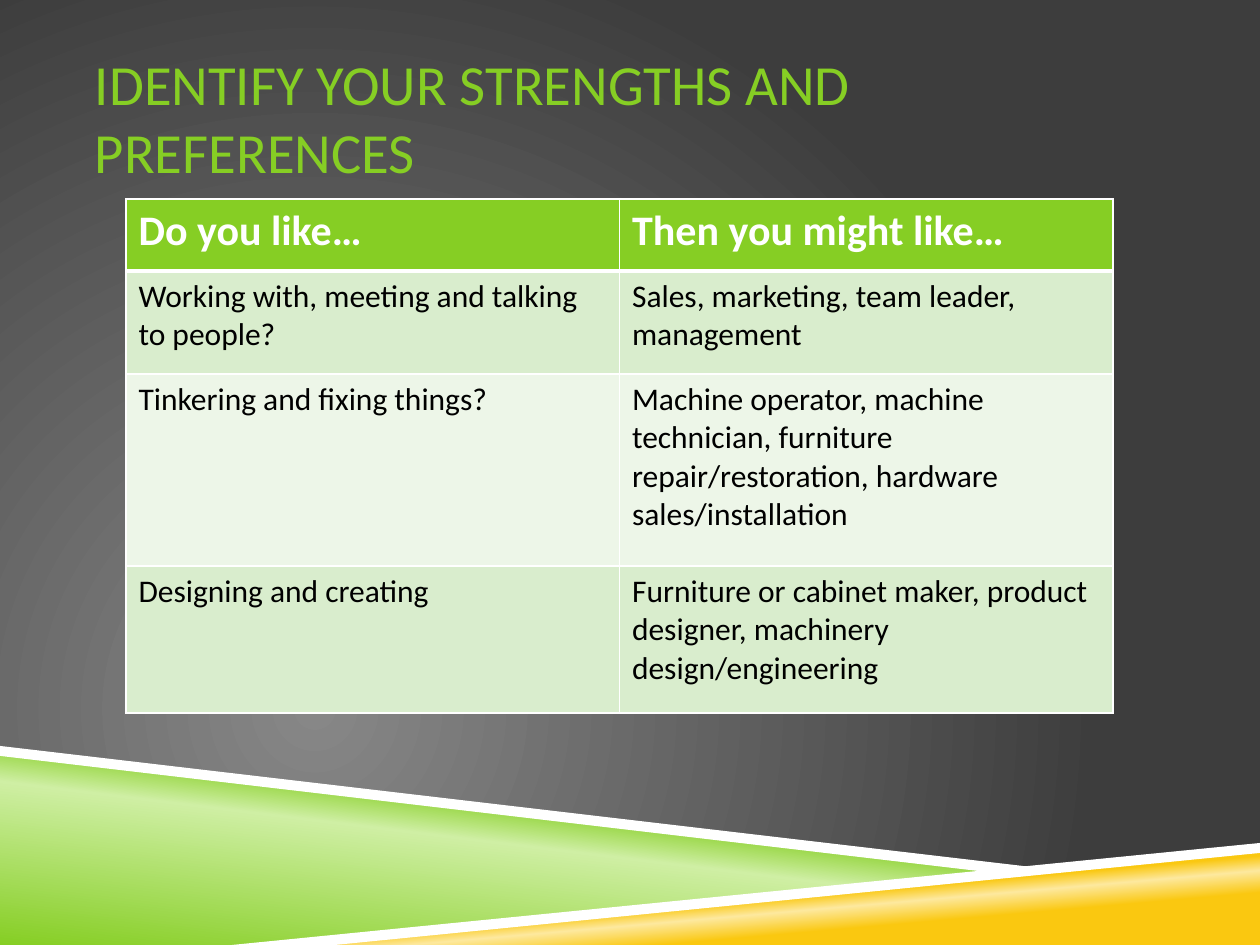
from lxml.etree import SubElement
from pptx import Presentation
from pptx.dml.color import RGBColor as Rgb
from pptx.enum.text import MSO_ANCHOR as Anchor, PP_ALIGN as Align
from pptx.oxml.ns import qn
from pptx.util import Pt

SCALE = 914400 / 126
FONT = "Calibri"
COLOURS = {
    "green": "86CE24", "pale green": "CFEFA4",
    "yellow": "FAC810", "pale yellow": "FDE99F",
    "grey": "878787", "dark": "3D3D3D",
    "white": "FFFFFF", "black": "000000",
    "odd row": "D9EDCD", "even row": "EDF6E8",
}
ROWS = [
    ("Do you like…", "Then you might like…"),
    ("Working with, meeting and talking to people?",
     "Sales, marketing, team leader, management"),
    ("Tinkering and fixing things?",
     "Machine operator, machine technician, furniture repair/restoration, "
     "hardware sales/installation"),
    ("Designing and creating",
     "Furniture or cabinet maker, product designer, machinery design/engineering"),
]
ROW_HEIGHTS = [72, 103, 192, 147]


def emu(px):
    return round(px * SCALE)


def colour(name):
    return Rgb.from_string(COLOURS[name])


def set_font(font, size, name, bold=False):
    values = {"name": FONT, "size": Pt(size), "bold": bold}
    for key, value in values.items():
        setattr(font, key, value)
    font.color.rgb = colour(name)


def add_gradient(fill, element, stops, angle=None):
    """Fill with (percent, colour) stops, linear at an angle or else circular."""
    fill.solid()
    solid = element.xpath(".//a:solidFill")[0]
    parent = solid.getparent()
    gradient = SubElement(parent, qn("a:gradFill"), rotWithShape="1")
    parent.replace(solid, gradient)
    stop_list = SubElement(gradient, qn("a:gsLst"))
    for position, name in stops:
        stop = SubElement(stop_list, qn("a:gs"), pos=str(position * 1000))
        SubElement(stop, qn("a:srgbClr"), val=COLOURS[name])
    if angle is None:
        circle = SubElement(gradient, qn("a:path"), path="circle")
        SubElement(circle, qn("a:fillToRect"),
                   l="50000", t="100000", r="100000", b="50000")
    else:
        SubElement(gradient, qn("a:lin"), ang=str(angle * 60000), scaled="0")


def add_polygon(page, left, top, points):
    builder = page.shapes.build_freeform(*points[0], scale=SCALE)
    builder.add_line_segments(points[1:], close=True)
    polygon = builder.convert_to_shape(emu(left), emu(top))
    polygon.shadow.inherit = False
    polygon.line.fill.background()
    return polygon


def add_footer(page, left, top, width, height):
    """Draw two sloping gradient wedges, then their white edges."""
    wedges = [
        ([(0, 6), (998, 126), (252, height), (0, height)],
         [(0, "green"), (52, "pale green"), (66, "green")], 277),
        ([(249, height), (width, 101), (width, height)],
         [(28, "yellow"), (40, "pale yellow"), (48, "yellow")], 265),
    ]
    edges = [
        [(0, 0), (0, 10), (995, 127), (1048, 123)],
        [(width, 97), (232, height), (335, height), (width, 107)],
    ]
    for points, stops, angle in wedges:
        wedge = add_polygon(page, left, top, points)
        add_gradient(wedge.fill, wedge.element, stops, angle)
    for points in edges:
        edge = add_polygon(page, left, top, points)
        edge.fill.solid()
        edge.fill.fore_color.rgb = colour("white")


def add_title(page, text, left, top, width, height):
    title = page.shapes.title
    page.shapes.element.append(title.element)
    title.left, title.top, title.width, title.height = map(
        emu, (left, top, width, height))
    frame = title.text_frame
    values = {"text": text, "word_wrap": True, "vertical_anchor": Anchor.MIDDLE,
              "margin_left": 0, "margin_right": 0}
    for key, value in values.items():
        setattr(frame, key, value)
    para = frame.paragraphs[0]
    para.alignment = Align.LEFT
    set_font(para.runs[0].font, 32.4, "green")


def add_borders(cell, top, bottom):
    """Draw white cell borders, with the top and bottom widths in points."""
    properties = cell._tc.get_or_add_tcPr()
    for side, points in {"L": 1, "R": 1, "T": top, "B": bottom}.items():
        line = SubElement(properties, qn(f"a:ln{side}"), w=str(Pt(points)))
        solid = SubElement(line, qn("a:solidFill"))
        SubElement(solid, qn("a:srgbClr"), val=COLOURS["white"])


def add_preferences(page, left, top, width, height):
    column_count = len(ROWS[0])
    table = page.shapes.add_table(
        len(ROWS), column_count, *map(emu, (left, top, width, height))).table
    for column in table.columns:
        column.width = emu(width / column_count)
    for index, (texts, row_height) in enumerate(zip(ROWS, ROW_HEIGHTS)):
        table.rows[index].height = emu(row_height)
        header = index == 0
        fill = "green" if header else "odd row" if index % 2 else "even row"
        for cell, text in zip(table.rows[index].cells, texts):
            add_borders(cell, 3 if index == 1 else 1, 3 if header else 1)
            cell.fill.solid()
            cell.fill.fore_color.rgb = colour(fill)
            cell.text = text
            set_font(cell.text_frame.paragraphs[0].runs[0].font,
                     24 if header else 18, "white" if header else "black", header)


def main():
    deck = Presentation()
    deck.slide_width, deck.slide_height = emu(1260), emu(945)
    page = deck.slides.add_slide(deck.slide_layouts[5])
    add_gradient(page.background.fill, page.element, [(0, "grey"), (100, "dark")])
    add_footer(page, 0, 746, 1260, 199)
    add_title(page, "IDENTIFY YOUR STRENGTHS AND PREFERENCES", 95, 38, 1071, 157)
    add_preferences(page, 126, 199, 987, sum(ROW_HEIGHTS))
    deck.save("out.pptx")


if __name__ == "__main__":
    main()
